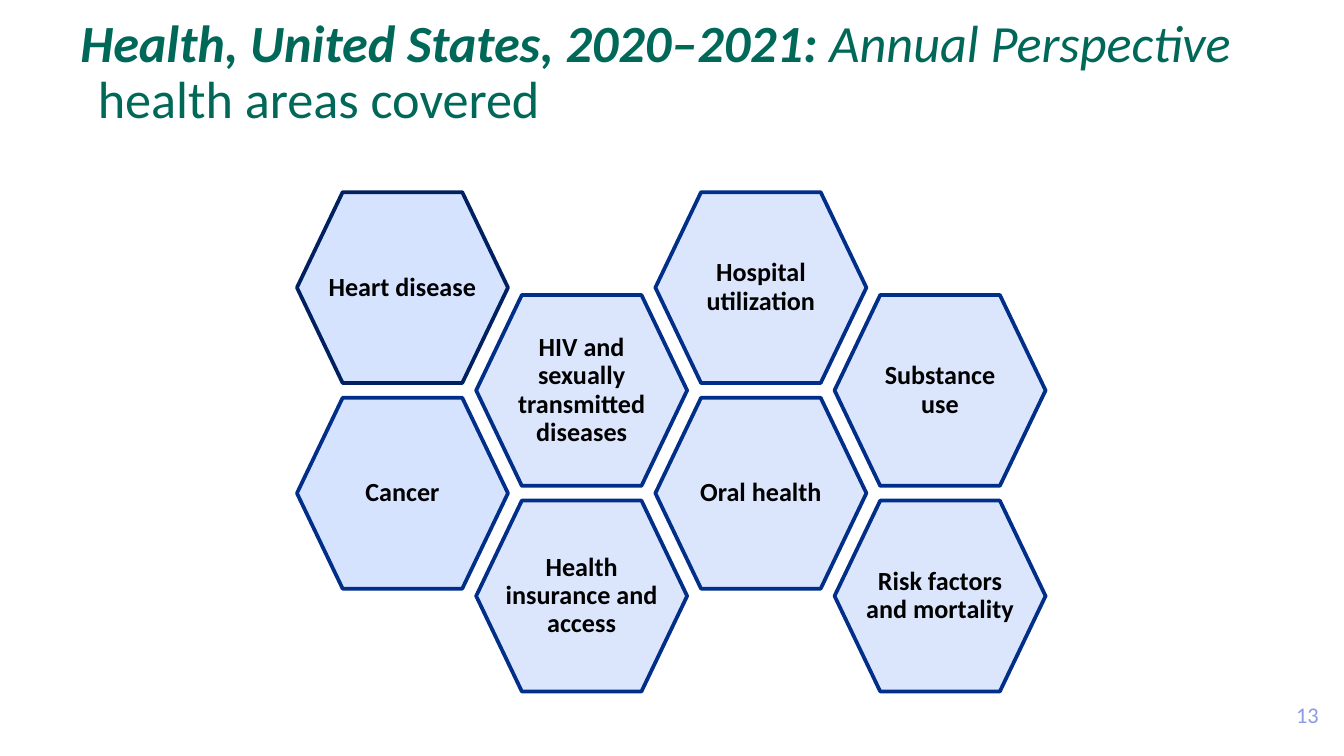
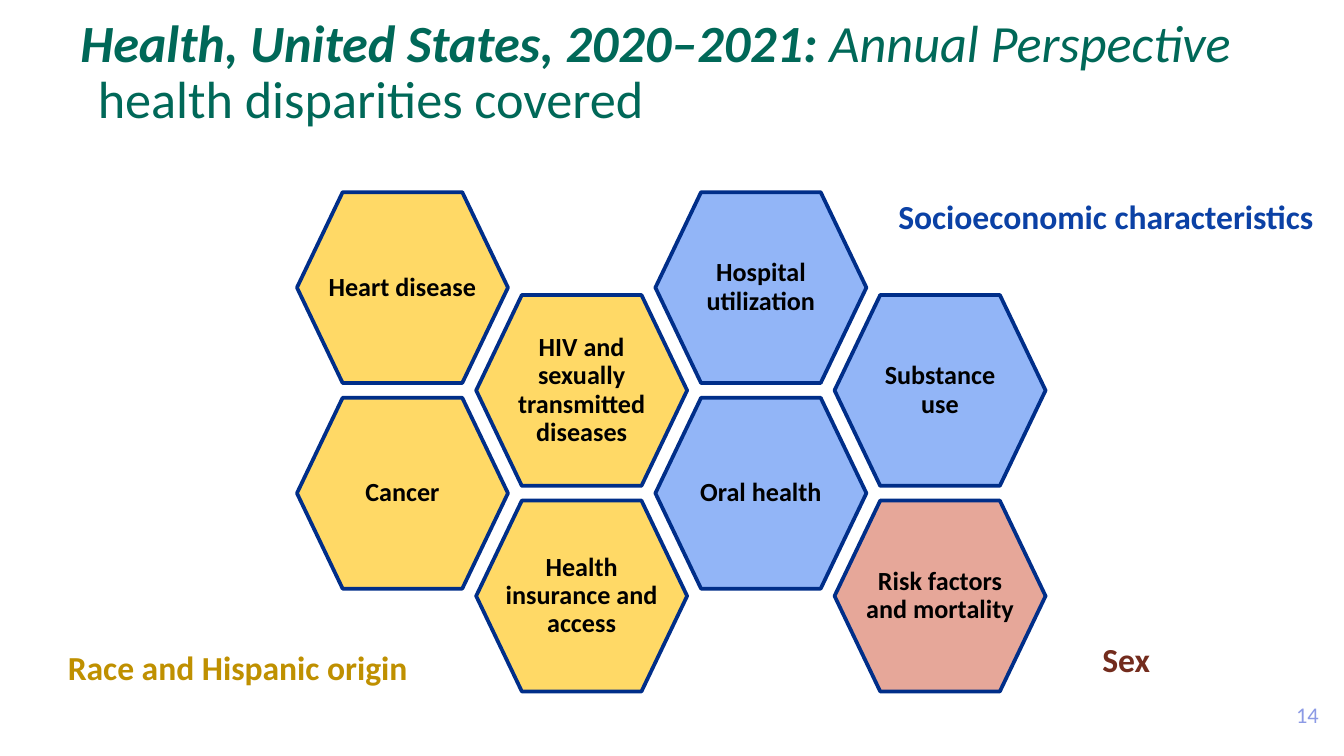
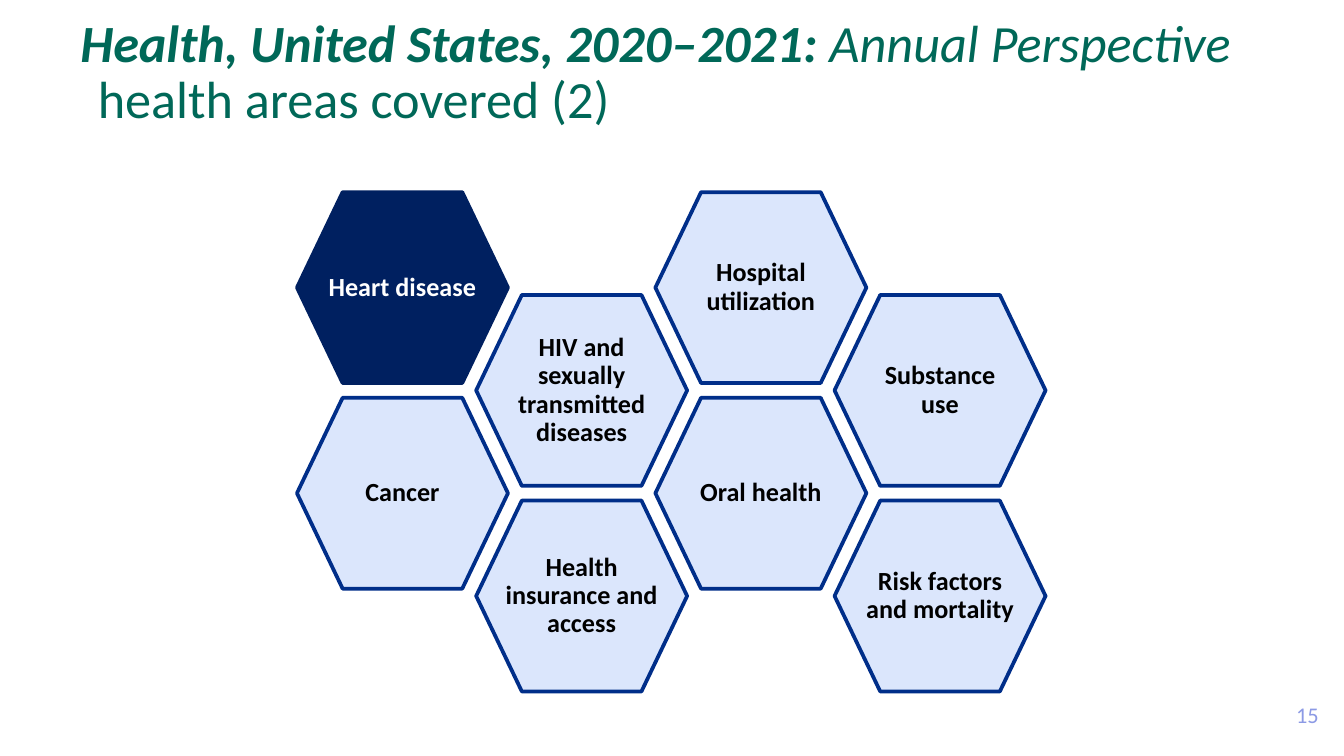
from pptx import Presentation
from pptx.dml.color import RGBColor
from pptx.enum.text import MSO_ANCHOR, PP_ALIGN
from pptx.oxml.xmlchemy import OxmlElement
from pptx.util import Inches, Pt

COLORS = {
    "title": "006858", "number": "8C9AE5", "black": "000000", "white": "FFFFFF",
    "outline": "002E89", "navy": "002060", "pale": "DBE6FC", "sky": "D6E3FF",
    "gold": "FFD966", "blue": "92B5F7", "rose": "E6A799",
    "gold_text": "BF9000", "blue_text": "0B41A5", "rose_text": "732C1D",
}
TITLE_FONT = {"size": Pt(28), "italic": True}
HEX_FONT = {"size": Pt(14), "bold": True}
LABEL_FONT = {"size": Pt(18), "bold": True}
NUMBER_FONT = {"size": Pt(12)}

# Health areas, column by column, two to a column, with their side margins
AREAS = [
    ("Heart disease", 0.2), ("Cancer", 0.2),
    ("HIV and sexually transmitted diseases", 0.24),
    ("Health insurance and access", 0.2),
    ("Hospital utilization", 0.2), ("Oral health", 0.24),
    ("Substance use", 0.24), ("Risk factors and mortality", 0.2),
]
GRID_LEFT, GRID_TOP = 2.21, 1.43
COLUMN_STEP, ROW_STEP = 4 / 3, 1.53
HEX_W, HEX_H, HEX_CUT = 1.57, 1.42, 0.34

LABELS = [
    ("Race and Hispanic origin", "gold_text", 0.35, 4.8, 2.84),
    ("Socioeconomic characteristics", "blue_text", 5.73, 1.44, 5),
    ("Sex", "rose_text", 7.66, 4.74, 1.44),
]


def rgb(name):
    return RGBColor.from_string(COLORS[name])


def add_run(p, text, color, fmt):
    r = p.add_run()
    r.text = text
    r.font.name = "Calibri"
    r.font.color.rgb = rgb(color)
    for key, value in fmt.items():
        setattr(r.font, key, value)


def add_box(s, left, top, width, height, anchor):
    """Add a wrapping text box and return its first paragraph."""
    sp = s.shapes.add_textbox(Inches(left), Inches(top), Inches(width), Inches(height))
    tf = sp.text_frame
    tf.word_wrap = True
    tf.vertical_anchor = anchor
    return tf.paragraphs[0]


def add_title(s, topic):
    p = add_box(s, 0.5, 0.18, 9, 0.83, MSO_ANCHOR.BOTTOM)
    p.line_spacing = Pt(30)
    pPr = p._p.get_or_add_pPr()
    pPr.set("marL", str(Inches(0.13)))
    pPr.set("indent", str(-Inches(0.13)))
    add_run(p, "Health, United States, 2020–2021: ", "title", {**TITLE_FONT, "bold": True})
    add_run(p, "Annual Perspective", "title", TITLE_FONT)
    p.add_line_break()
    add_run(p, topic, "title", {**TITLE_FONT, "italic": False})


def add_number(s, number):
    p = add_box(s, 7.66, 5.17, 2.25, 0.3, MSO_ANCHOR.MIDDLE)
    p.alignment = PP_ALIGN.RIGHT
    add_run(p, str(number), "number", NUMBER_FONT)


def add_label(s, text, color, left, top, width):
    p = add_box(s, left, top, width, 0.37, MSO_ANCHOR.TOP)
    p.alignment = PP_ALIGN.CENTER
    p.line_spacing = 0.9
    add_run(p, text, color, LABEL_FONT)


def add_hexagon(s, left, top, text, margin, fill, line="outline", color="black"):
    right, bottom, middle = left + HEX_W, top + HEX_H, top + HEX_H / 2
    corners = [
        (left, middle), (left + HEX_CUT, top), (right - HEX_CUT, top),
        (right, middle), (right - HEX_CUT, bottom), (left + HEX_CUT, bottom),
    ]
    points = [(Inches(x), Inches(y)) for x, y in corners]
    builder = s.shapes.build_freeform(*points[0])
    builder.add_line_segments(points[1:], close=True)
    sp = builder.convert_to_shape()
    sp.shadow.inherit = False
    sp.fill.solid()
    sp.fill.fore_color.rgb = rgb(fill)
    sp.line.color.rgb = rgb(line)
    sp.line.width = Pt(2)
    sp.line._get_or_add_ln().append(OxmlElement("a:round"))

    tf = sp.text_frame
    tf.word_wrap = True
    tf.vertical_anchor = MSO_ANCHOR.MIDDLE
    tf.margin_left = tf.margin_right = Inches(margin)
    p = tf.paragraphs[0]
    p.alignment = PP_ALIGN.CENTER
    p.line_spacing = 0.9
    add_run(p, text, color, HEX_FONT)


def add_honeycomb(s, fills, first_style):
    """Draw all areas; first_style holds extra colours for the first one."""
    for i, ((text, margin), fill) in enumerate(zip(AREAS, fills)):
        column, row = divmod(i, 2)
        left = GRID_LEFT + column * COLUMN_STEP
        top = GRID_TOP + (row + column % 2 / 2) * ROW_STEP
        add_hexagon(s, left, top, text, margin, fill, **(first_style if i == 0 else {}))


def main():
    prs = Presentation()
    prs.slide_width = Inches(10)
    prs.slide_height = prs.slide_width * 9 // 16
    slides = [
        ("health areas covered", ["sky"] * 2 + ["pale"] * 6, {"line": "navy"}, []),
        ("health disparities covered", ["gold"] * 4 + ["blue"] * 3 + ["rose"], {}, LABELS),
        ("health areas covered (2)", ["navy"] + ["pale"] * 7,
         {"line": "navy", "color": "white"}, []),
    ]
    for number, (topic, fills, first_style, labels) in enumerate(slides, start=13):
        s = prs.slides.add_slide(prs.slide_layouts[6])
        add_title(s, topic)
        for label in labels:
            add_label(s, *label)
        add_honeycomb(s, fills, first_style)
        add_number(s, number)
    prs.save("out.pptx")


if __name__ == "__main__":
    main()
